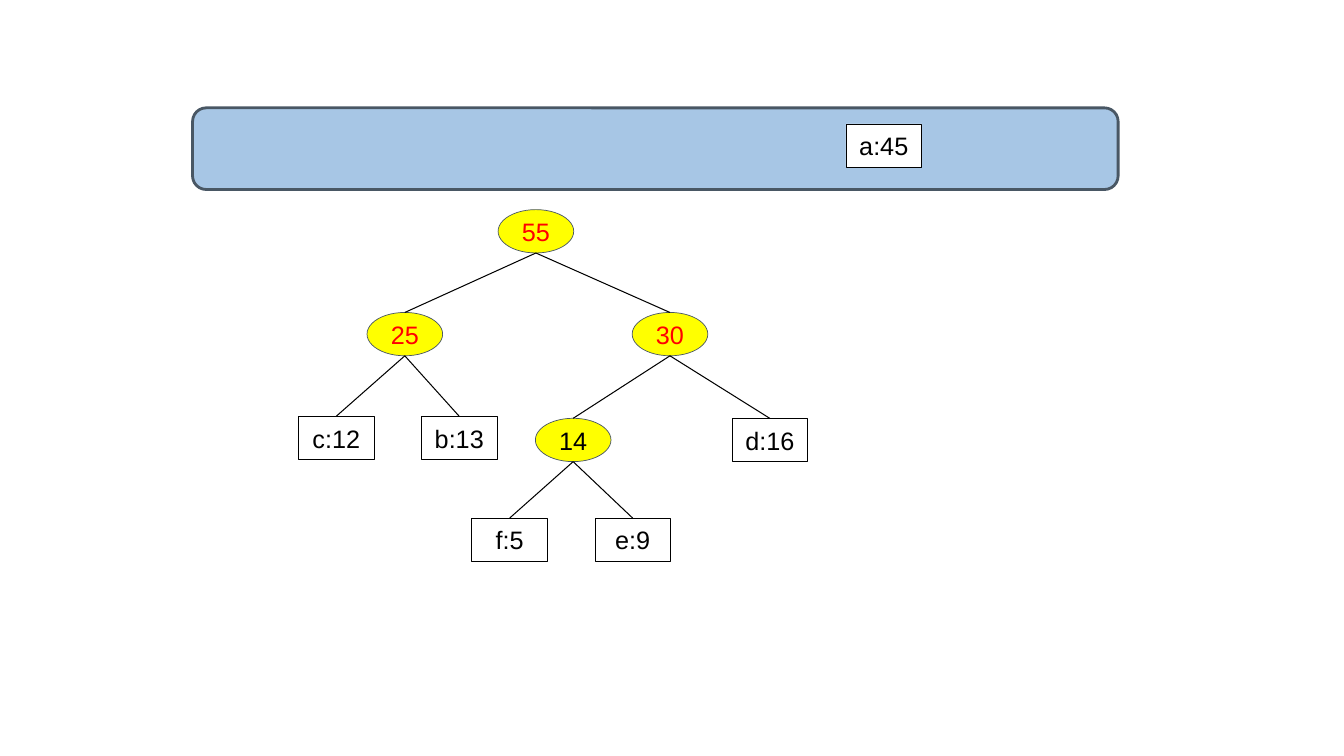
from lxml.etree import SubElement
from pptx import Presentation
from pptx.dml.color import RGBColor
from pptx.enum.shapes import MSO_CONNECTOR, MSO_SHAPE
from pptx.enum.text import MSO_ANCHOR, PP_ALIGN
from pptx.oxml.ns import qn
from pptx.util import Pt

EMU_PER_PX = 9144  # 100 px to the inch
NODE_WIDTH, NODE_HEIGHT = 75, 43

BLACK, WHITE, RED, YELLOW = "000000", "FFFFFF", "FF0000", "FFFF00"
SLATE, BLUE = "495764", "A7C6E5"

# Each node: label, left and top within the tree, text colour, children
TREE = ("55", 198, 0, RED, [
    ("25", 68, 102, RED, [
        ("c:12", 0, 205, BLACK, []),
        ("b:13", 122, 205, BLACK, []),
    ]),
    ("30", 331, 102, RED, [
        ("14", 235, 207, BLACK, [
            ("f:5", 172, 306, BLACK, []),
            ("e:9", 294, 306, BLACK, []),
        ]),
        ("d:16", 430, 207, BLACK, []),
    ]),
])


def px(length):
    return round(length * EMU_PER_PX)


def color(value):
    return RGBColor.from_string(value)


def add_box(page, kind, box, fill, line, line_width):
    shape = page.shapes.add_shape(kind, *map(px, box))
    shape.shadow.inherit = False
    shape.fill.solid()
    shape.fill.fore_color.rgb = color(fill)
    shape.line.color.rgb = color(line)
    shape.line.width = Pt(line_width)
    return shape


def add_node(page, label, left, top, text_color=BLACK, inner=False):
    """Inner nodes are yellow ellipses, leaves are white rectangles."""
    kind, fill, line = ((MSO_SHAPE.OVAL, YELLOW, SLATE) if inner
                        else (MSO_SHAPE.RECTANGLE, WHITE, BLACK))
    node = add_box(page, kind, (left, top, NODE_WIDTH, NODE_HEIGHT), fill, line, 0.5)
    frame = node.text_frame
    frame.margin_left = frame.margin_right = 0
    frame.margin_top = frame.margin_bottom = 0
    frame.vertical_anchor = MSO_ANCHOR.MIDDLE
    para = frame.paragraphs[0]
    para.text = label
    para.alignment = PP_ALIGN.CENTER
    para.font.name = "Arial"
    para.font.size = Pt(18)
    para.font.color.rgb = color(text_color)
    return node


def add_branch(page, child, parent):
    """Line from the top of the child to the bottom of the parent."""
    branch = page.shapes.add_connector(
        MSO_CONNECTOR.STRAIGHT,
        child.left + child.width // 2, child.top,
        parent.left + parent.width // 2, parent.top + parent.height)
    branch.begin_connect(child, 0)
    branch.line.color.rgb = color(BLACK)
    branch.line.width = Pt(0.75)
    SubElement(branch._element.spPr, qn("a:effectLst"))


def add_tree(page, tree, left, top):
    label, x, y, text_color, children = tree
    parent = add_node(page, label, left + x, top + y, text_color, bool(children))
    for subtree in children:
        add_branch(page, add_tree(page, subtree, left, top), parent)
    return parent


def add_queue(page, left, top, width, height):
    """Bar with the one node still waiting to be merged."""
    add_box(page, MSO_SHAPE.ROUNDED_RECTANGLE, (left, top, width, height), BLUE, SLATE, 2)
    add_node(page, "a:45", left + 648, top + 16)


def main():
    deck = Presentation()
    deck.slide_width, deck.slide_height = px(1333), px(750)
    page = deck.slides.add_slide(deck.slide_layouts[6])
    add_queue(page, 191, 107, 918, 81)
    add_tree(page, TREE, 296, 208)
    deck.save("out.pptx")


if __name__ == "__main__":
    main()
